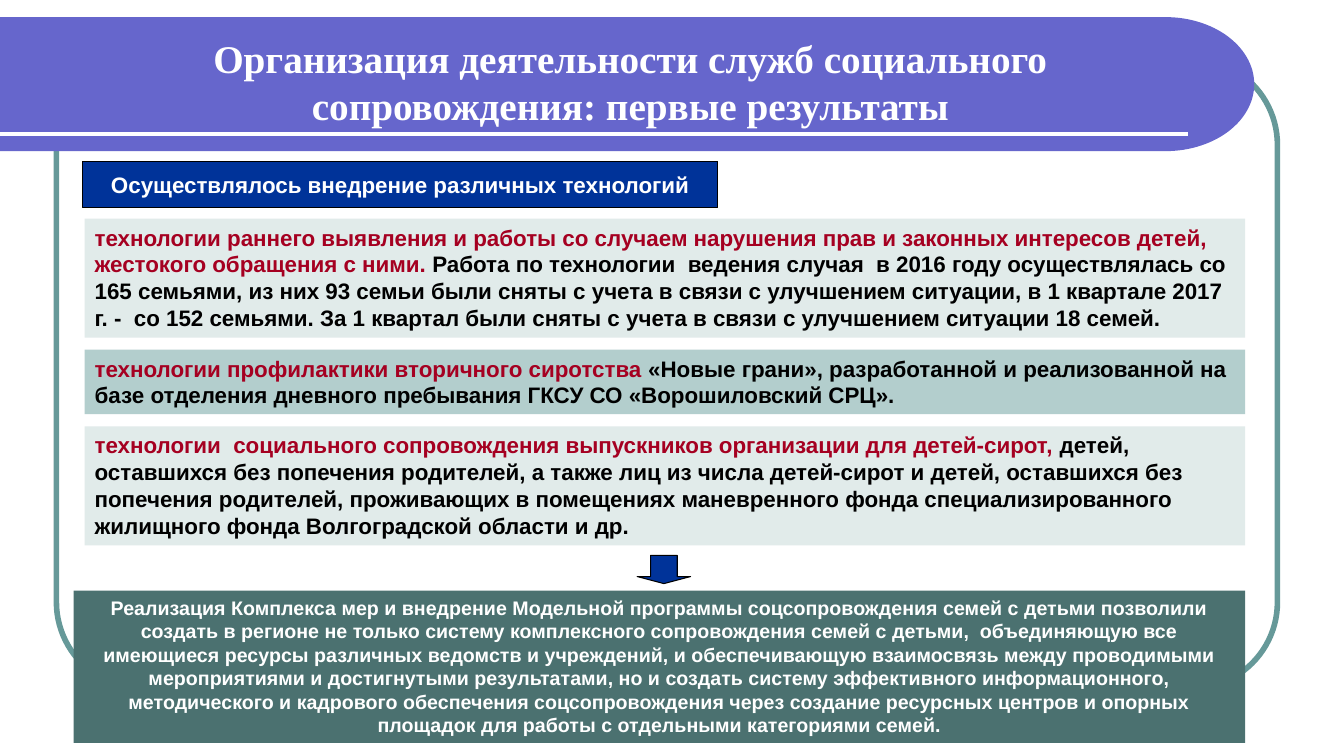
from dataclasses import dataclass
from math import cos, pi, sin

from lxml.etree import SubElement
from pptx import Presentation
from pptx.dml.color import RGBColor
from pptx.enum.shapes import MSO_CONNECTOR as Connector, MSO_SHAPE as Shape
from pptx.enum.text import MSO_ANCHOR as Anchor, MSO_AUTO_SIZE as AutoSize, PP_ALIGN as Align
from pptx.oxml.ns import qn
from pptx.util import Inches, Pt


@dataclass(frozen=True)
class Theme:
    violet: str = "6666CC"
    teal: str = "669999"
    dark_teal: str = "4B7170"
    pale: str = "E1EBEA"
    mid: str = "B3CECD"
    navy: str = "003399"
    red: str = "A50021"
    black: str = "000000"
    white: str = "FFFFFF"
    title_font: str = "Times New Roman"
    body_font: str = "Arial"
    title_size: int = 28
    body_size: int = 16
    summary_size: int = 14


THEME = Theme()

TITLE = "Организация деятельности служб социального сопровождения: первые результаты"
HEADING = "Осуществлялось внедрение различных технологий"
# Each technology: top, height, fill, highlighted words, remaining words
TECHNOLOGIES = [
    (2.17, 1.18, THEME.pale,
     "технологии раннего выявления и работы со случаем нарушения прав и законных "
     "интересов детей, жестокого обращения с ними.",
     " Работа по технологии  ведения случая  в 2016 году осуществлялась со 165 семьями, "
     "из них 93 семьи были сняты с учета в связи с улучшением ситуации, в 1 квартале "
     "2017 г. -  со 152 семьями. За 1 квартал были сняты с учета в связи с улучшением "
     "ситуации 18 семей."),
    (3.47, 0.64, THEME.mid,
     "технологии профилактики вторичного сиротства",
     " «Новые грани», разработанной и реализованной на базе отделения дневного "
     "пребывания ГКСУ СО «Ворошиловский СРЦ»."),
    (4.23, 1.18, THEME.pale,
     "технологии  социального сопровождения выпускников организации для детей-сирот,",
     " детей, оставшихся без попечения родителей, а также лиц из числа детей-сирот и "
     "детей, оставшихся без попечения родителей, проживающих в помещениях маневренного "
     "фонда специализированного жилищного фонда Волгоградской области и др."),
]
SUMMARY = (
    "Реализация Комплекса мер и внедрение Модельной программы соцсопровождения семей с "
    "детьми позволили создать в регионе не только систему комплексного сопровождения "
    "семей с детьми,  объединяющую все имеющиеся ресурсы различных ведомств и "
    "учреждений, и обеспечивающую взаимосвязь между проводимыми мероприятиями и "
    "достигнутыми результатами, но и создать систему эффективного информационного, "
    "методического и кадрового обеспечения соцсопровождения через создание ресурсных "
    "центров и опорных площадок для работы с отдельными категориями семей."
)


def color(value):
    return RGBColor.from_string(value)


def style_shape(shape, fill=None, line=None, line_width=0.75):
    shape.shadow.inherit = False
    if fill:
        shape.fill.solid()
        shape.fill.fore_color.rgb = color(fill)
    else:
        shape.fill.background()
    if line:
        shape.line.color.rgb = color(line)
        shape.line.width = Pt(line_width)
    else:
        shape.line.fill.background()


def add_shape(slide, kind, box, **style):
    shape = slide.shapes.add_shape(kind, *map(Inches, box))
    style_shape(shape, **style)
    return shape


def write_text(shape, runs, size=THEME.body_size, font=THEME.body_font, align=Align.LEFT,
               anchor=Anchor.TOP, wrap=True, auto_size=AutoSize.NONE):
    """Fill one paragraph with (text, colour) runs."""
    frame = shape.text_frame
    frame.word_wrap = wrap
    frame.auto_size = auto_size
    frame.vertical_anchor = anchor
    paragraph = frame.paragraphs[0]
    paragraph.alignment = align
    for text, run_color in runs:
        run = paragraph.add_run()
        run.text = text
        run.font.name = font
        run.font.size = Pt(size)
        run.font.bold = True
        run.font.color.rgb = color(run_color)


def add_frame(slide, box):
    frame = add_shape(slide, Shape.ROUNDED_RECTANGLE, box, line=THEME.teal, line_width=4)
    frame.adjustments[0] = 0.137


def add_title_band(slide, box):
    left, top, width, height = box
    cap, middle = 0.88, top + height / 2
    cap_start = left + width - cap
    steps = 60
    angles = [pi * step / steps - pi / 2 for step in range(steps + 1)]
    points = [(cap_start + cap * cos(angle), middle + height / 2 * sin(angle))
              for angle in angles]
    points.append((left, top + height))

    # Band with an elliptical right end
    builder = slide.shapes.build_freeform(Inches(left), Inches(top), scale=1.0)
    builder.add_line_segments([(Inches(x), Inches(y)) for x, y in points], close=True)
    style_shape(builder.convert_to_shape(), fill=THEME.violet)

    # White rule
    rule_y = Inches(top + 1.16)
    rule = slide.shapes.add_connector(
        Connector.STRAIGHT, Inches(left), rule_y, Inches(left + 11.78), rule_y)
    rule.line.color.rgb = color(THEME.white)
    rule.line.width = Pt(3)
    SubElement(rule.element.spPr, qn("a:effectLst"))

    # Title, brought in front of the band
    title = slide.shapes.title
    title.left, title.top, title.width, title.height = map(
        Inches, (left + 1.86, top + 0.19, 8.78, 0.89))
    write_text(title, [(TITLE, THEME.white)], size=THEME.title_size,
               font=THEME.title_font, align=Align.CENTER, anchor=Anchor.MIDDLE)
    title.element.getparent().append(title.element)


def add_heading(slide, box):
    heading = add_shape(slide, Shape.RECTANGLE, box, fill=THEME.navy, line=THEME.black)
    write_text(heading, [(HEADING, THEME.white)], align=Align.CENTER,
               anchor=Anchor.MIDDLE, wrap=False)


def add_technology(slide, box, fill, highlight, details):
    panel = add_shape(slide, Shape.RECTANGLE, box, fill=fill)
    write_text(panel, [(highlight, THEME.red), (details, THEME.black)],
               auto_size=AutoSize.SHAPE_TO_FIT_TEXT)


def add_summary(slide, box):
    left, top, width, _ = box
    panel = add_shape(slide, Shape.RECTANGLE, box, fill=THEME.dark_teal)
    write_text(panel, [(SUMMARY, THEME.white)], size=THEME.summary_size,
               align=Align.CENTER, auto_size=AutoSize.SHAPE_TO_FIT_TEXT)
    # Arrow leading into the summary
    arrow_box = (left + width / 2 - 0.22, top - 0.35, 0.53, 0.28)
    arrow = add_shape(slide, Shape.DOWN_ARROW, arrow_box, fill=THEME.navy, line=THEME.black)
    arrow.adjustments[0], arrow.adjustments[1] = 0.5, 0.25


def main():
    presentation = Presentation()
    presentation.slide_width = Inches(13.33)
    presentation.slide_height = Inches(7.5)
    slide = presentation.slides.add_slide(presentation.slide_layouts[5])
    add_frame(slide, (0.56, 0.58, 12.11, 6.25))
    add_title_band(slide, (0, 0.17, 12.44, 1.33))
    add_heading(slide, (0.82, 1.6, 6.3, 0.46))
    for top, height, fill, highlight, details in TECHNOLOGIES:
        add_technology(slide, (0.84, top, 11.51, height), fill, highlight, details)
    add_summary(slide, (0.73, 5.86, 11.62, 1.51))
    presentation.save("out.pptx")


if __name__ == "__main__":
    main()
